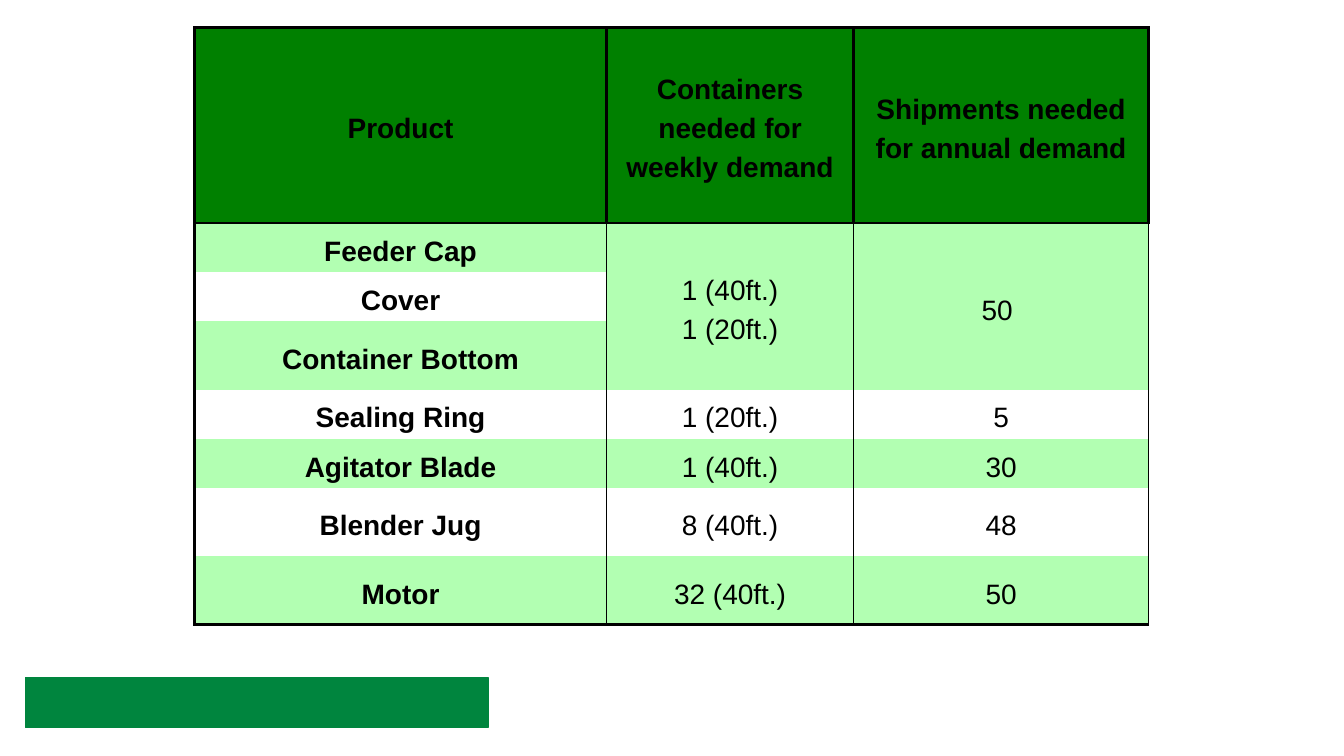
from dataclasses import dataclass

from lxml import etree
from pptx import Presentation
from pptx.dml.color import RGBColor
from pptx.enum.shapes import MSO_SHAPE
from pptx.enum.text import MSO_ANCHOR, PP_ALIGN
from pptx.oxml.ns import qn
from pptx.util import Cm, Pt

CENTER = PP_ALIGN.CENTER
MIDDLE = MSO_ANCHOR.MIDDLE
RECTANGLE = MSO_SHAPE.RECTANGLE


@dataclass(frozen=True)
class Theme:
    font: str = "Arial"
    text_size: float = 20
    line_spacing: float = 1.25
    ink: str = "000000"
    header: str = "008000"
    band: str = "B2FFB2"
    plain: str = "FFFFFF"
    footer: str = "00853E"
    thick: float = 2.25
    thin: float = 1


THEME = Theme()

HEADINGS = ("Product", "Containers needed for weekly demand",
            "Shipments needed for annual demand")
SHIPMENTS = (
    ("Feeder Cap", "1 (40ft.)\n1 (20ft.)", "50 "),
    ("Cover", "", ""),
    ("Container Bottom", "", ""),
    ("Sealing Ring", "1 (20ft.)", "5"),
    ("Agitator Blade", "1 (40ft.)", "30"),
    ("Blender Jug", "8 (40ft.)", "48"),
    ("Motor", "32 (40ft.)", "50"),
)
SHARED_ROWS = (1, 3)  # first and last row shipped together
COLUMN_WIDTHS = (10.39, 6.22, 7.44)
ROW_HEIGHTS = (4.93, 1.24, 1.24, 1.72, 1.24, 1.24, 1.72, 1.72)


def write_text(frame, text, *, bold=False, size=THEME.text_size, color=THEME.ink):
    """Fill a text frame with one centred paragraph per line of text."""
    frame.text = text
    for paragraph in frame.paragraphs:
        paragraph.alignment = CENTER
        paragraph.line_spacing = THEME.line_spacing
        for font in [paragraph.font] + [run.font for run in paragraph.runs]:
            font.name = THEME.font
            font.size = Pt(size)
            font.bold = bold
            font.color.rgb = RGBColor.from_string(color)


def set_borders(cell, **widths):
    """Draw the sides L, R, T and B at the given point widths; 0 hides a side."""
    properties = cell._tc.get_or_add_tcPr()
    for position, side in enumerate("LRTB"):
        width = widths[side]
        line = etree.Element(qn(f"a:ln{side}"), w=str(Pt(width)))
        if width:
            fill = etree.SubElement(line, qn("a:solidFill"))
            etree.SubElement(fill, qn("a:srgbClr"), val=THEME.ink)
        else:
            etree.SubElement(line, qn("a:noFill"))
        properties.insert(position, line)


def format_cell(cell, row, column):
    is_header = row == 0
    shared = column > 0 and SHARED_ROWS[0] <= row <= SHARED_ROWS[1]
    banded = shared or row % 2 == 1
    color = THEME.header if is_header else THEME.band if banded else THEME.plain
    cell.fill.solid()
    cell.fill.fore_color.rgb = RGBColor.from_string(color)
    cell.vertical_anchor = MIDDLE
    cell.margin_left = cell.margin_right = Cm(0.18)
    cell.margin_top = cell.margin_bottom = 0
    set_borders(
        cell,
        L=THEME.thick if is_header or column == 0 else THEME.thin,
        R=THEME.thick if is_header else THEME.thin,
        T=THEME.thick if row <= 1 else 0,
        B=THEME.thick if is_header or row == len(SHIPMENTS) else 0,
    )


def add_shipment_table(slide):
    rows = (HEADINGS,) + SHIPMENTS
    table = slide.shapes.add_table(
        len(rows), len(HEADINGS), Cm(4.9), Cm(0.69),
        Cm(sum(COLUMN_WIDTHS)), Cm(sum(ROW_HEIGHTS))).table
    table.first_row = table.horz_banding = False
    for column, width in zip(table.columns, COLUMN_WIDTHS):
        column.width = Cm(width)
    for table_row, height in zip(table.rows, ROW_HEIGHTS):
        table_row.height = Cm(height)
    for row, texts in enumerate(rows):
        for column, text in enumerate(texts):
            cell = table.cell(row, column)
            format_cell(cell, row, column)
            write_text(cell.text_frame, text, bold=row == 0 or column == 0)
    first, last = SHARED_ROWS
    for column in range(1, len(HEADINGS)):
        table.cell(first, column).merge(table.cell(last, column))


def add_footer_bar(slide):
    bar = slide.shapes.add_shape(RECTANGLE, Cm(0.64), Cm(17.07), Cm(11.66), Cm(1.27))
    bar.shadow.inherit = False
    bar.fill.solid()
    bar.fill.fore_color.rgb = RGBColor.from_string(THEME.footer)
    bar.line.color.rgb = RGBColor.from_string(THEME.footer)
    bar.line.width = Pt(0.75)


def main():
    presentation = Presentation()
    presentation.slide_width = Cm(33.87)
    presentation.slide_height = Cm(19.05)
    slide = presentation.slides.add_slide(presentation.slide_layouts[6])
    add_shipment_table(slide)
    add_footer_bar(slide)
    presentation.save("out.pptx")


if __name__ == "__main__":
    main()
